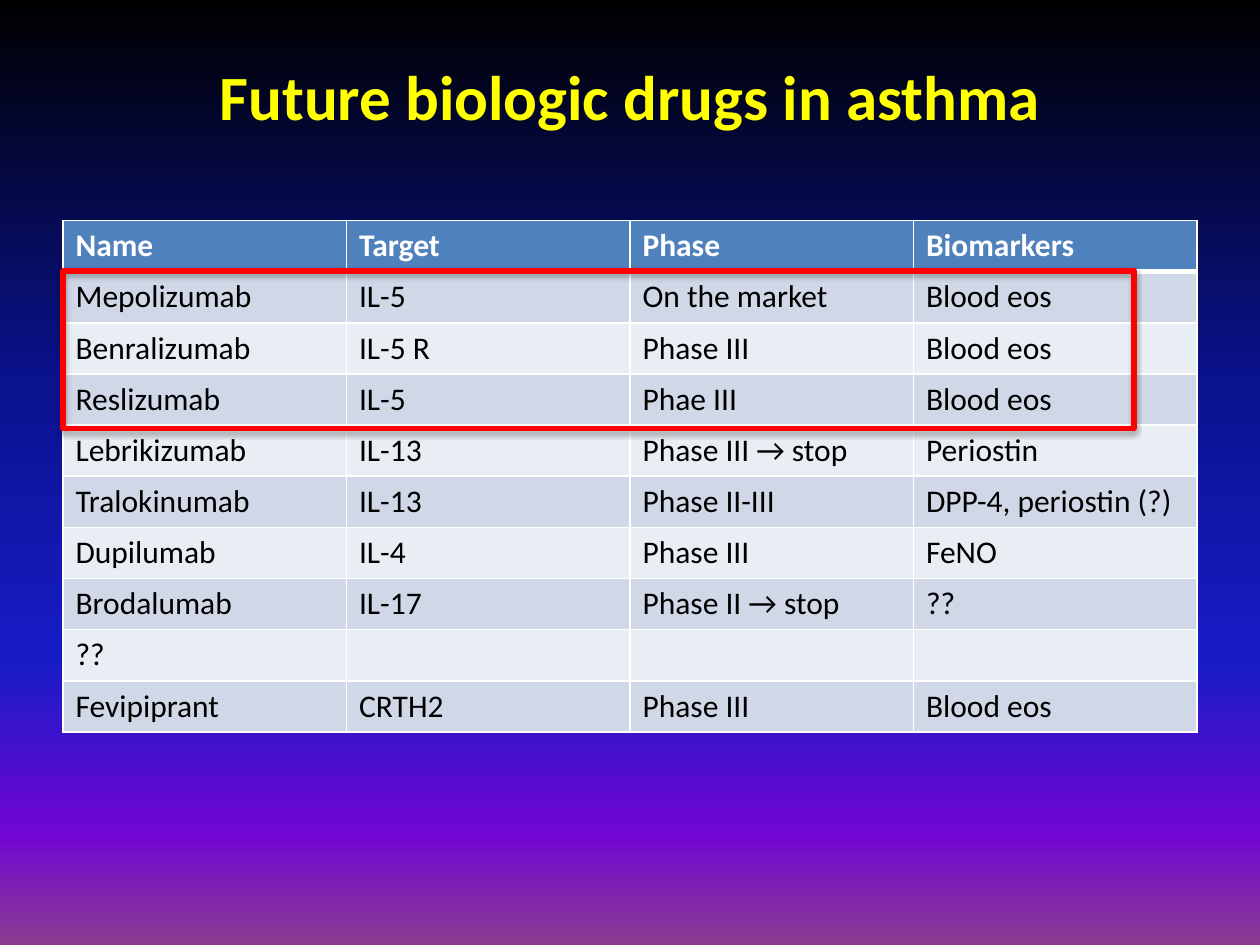
from lxml.etree import SubElement
from pptx import Presentation
from pptx.dml.color import RGBColor
from pptx.enum.shapes import MSO_SHAPE as Shape
from pptx.enum.text import MSO_ANCHOR as Anchor, PP_ALIGN as Align
from pptx.oxml.ns import qn
from pptx.util import Inches, Pt

COLORS = {
    "title": "FFFF00",
    "header": "4F81BD",
    "odd": "D0D8E8",
    "even": "E9EDF4",
    "light": "FFFFFF",
    "dark": "000000",
    "highlight": "FF0000",
}
BACKGROUND_STOPS = [
    (0, "000000"), (40, "0A128C"), (70, "181CC7"), (88, "7005D4"), (100, "8C3D91"),
]
DRUGS = [
    ("Name", "Target", "Phase", "Biomarkers"),
    ("Mepolizumab", "IL-5", "On the market", "Blood eos"),
    ("Benralizumab", "IL-5 R", "Phase III", "Blood eos"),
    ("Reslizumab", "IL-5", "Phae III", "Blood eos"),
    ("Lebrikizumab", "IL-13", "Phase III → stop", "Periostin"),
    ("Tralokinumab", "IL-13", "Phase II-III", "DPP-4, periostin (?)"),
    ("Dupilumab", "IL-4", "Phase III", "FeNO"),
    ("Brodalumab", "IL-17", "Phase II → stop", "??"),
    ("??", "", "", ""),
    ("Fevipiprant", "CRTH2", "Phase III", "Blood eos"),
]


def color(name):
    return RGBColor.from_string(COLORS[name])


def add_element(parent, tag, **attributes):
    values = {key: str(value) for key, value in attributes.items()}
    return SubElement(parent, qn(tag), values)


class SlideBuilder:
    """Holds the style and the current slide."""

    font = "Calibri"

    def __init__(self, page):
        self.page = page

    def style(self, para, size, name, bold=False):
        para.font.name = self.font
        para.font.size = Pt(size)
        para.font.bold = bold
        para.font.color.rgb = color(name)

    def background(self, stops):
        fill = self.page.background.fill
        fill.gradient()
        fill.gradient_angle = 270
        stop_list = self.page._element.xpath(".//p:bg//a:gsLst")[0]
        for old_stop in list(stop_list):
            stop_list.remove(old_stop)
        for percent, value in stops:
            stop = add_element(stop_list, "a:gs", pos=percent * 1000)
            add_element(stop, "a:srgbClr", val=value)

    def title(self, text, left, top, width, height):
        box = self.page.shapes.title
        box.left, box.top = Inches(left), Inches(top)
        box.width, box.height = Inches(width), Inches(height)
        box.text_frame.text = text
        box.text_frame.vertical_anchor = Anchor.MIDDLE
        para = box.text_frame.paragraphs[0]
        para.alignment = Align.CENTER
        self.style(para, 36, "title", bold=True)

    def borders(self, cell, top, bottom):
        properties = cell._tc.get_or_add_tcPr()
        for side, width in (("L", 1), ("R", 1), ("T", top), ("B", bottom)):
            line = add_element(properties, f"a:ln{side}", w=Pt(width))
            fill = add_element(line, "a:solidFill")
            add_element(fill, "a:srgbClr", val=COLORS["light"])

    def table(self, rows, left, top, width, height):
        frame = self.page.shapes.add_table(
            len(rows), len(rows[0]),
            Inches(left), Inches(top), Inches(width), Inches(height))
        for r, row in enumerate(rows):
            is_header = r == 0
            band = "header" if is_header else "odd" if r % 2 else "even"
            for c, text in enumerate(row):
                cell = frame.table.cell(r, c)
                self.borders(cell, top=3 if r == 1 else 1, bottom=3 if is_header else 1)
                cell.fill.solid()
                cell.fill.fore_color.rgb = color(band)
                cell.text = text
                self.style(cell.text_frame.paragraphs[0], 18,
                           "light" if is_header else "dark", bold=is_header)

    def highlight(self, left, top, width, height):
        """Outline an area with a soft shadow below it."""
        box = self.page.shapes.add_shape(
            Shape.RECTANGLE, Inches(left), Inches(top), Inches(width), Inches(height))
        box.fill.background()
        box.line.color.rgb = color("highlight")
        box.line.width = Pt(3)
        box.shadow.inherit = False
        effects = box._element.spPr.find(qn("a:effectLst"))
        shadow = add_element(effects, "a:outerShdw", blurRad=Pt(3.1), dist=Pt(1.8),
                             dir=90 * 60000, rotWithShape=0)
        tint = add_element(shadow, "a:srgbClr", val=COLORS["dark"])
        add_element(tint, "a:alpha", val=35000)


def main():
    deck = Presentation()
    deck.slide_width, deck.slide_height = Inches(10), Inches(7.5)
    builder = SlideBuilder(deck.slides.add_slide(deck.slide_layouts[5]))
    builder.background(BACKGROUND_STOPS)
    builder.title("Future biologic drugs in asthma", 0.5, 0.13, 9, 1.25)
    builder.table(DRUGS, 0.5, 1.75, 9, 4.06)
    builder.highlight(0.5, 2.15, 8.5, 1.25)
    deck.save("out.pptx")


if __name__ == "__main__":
    main()
